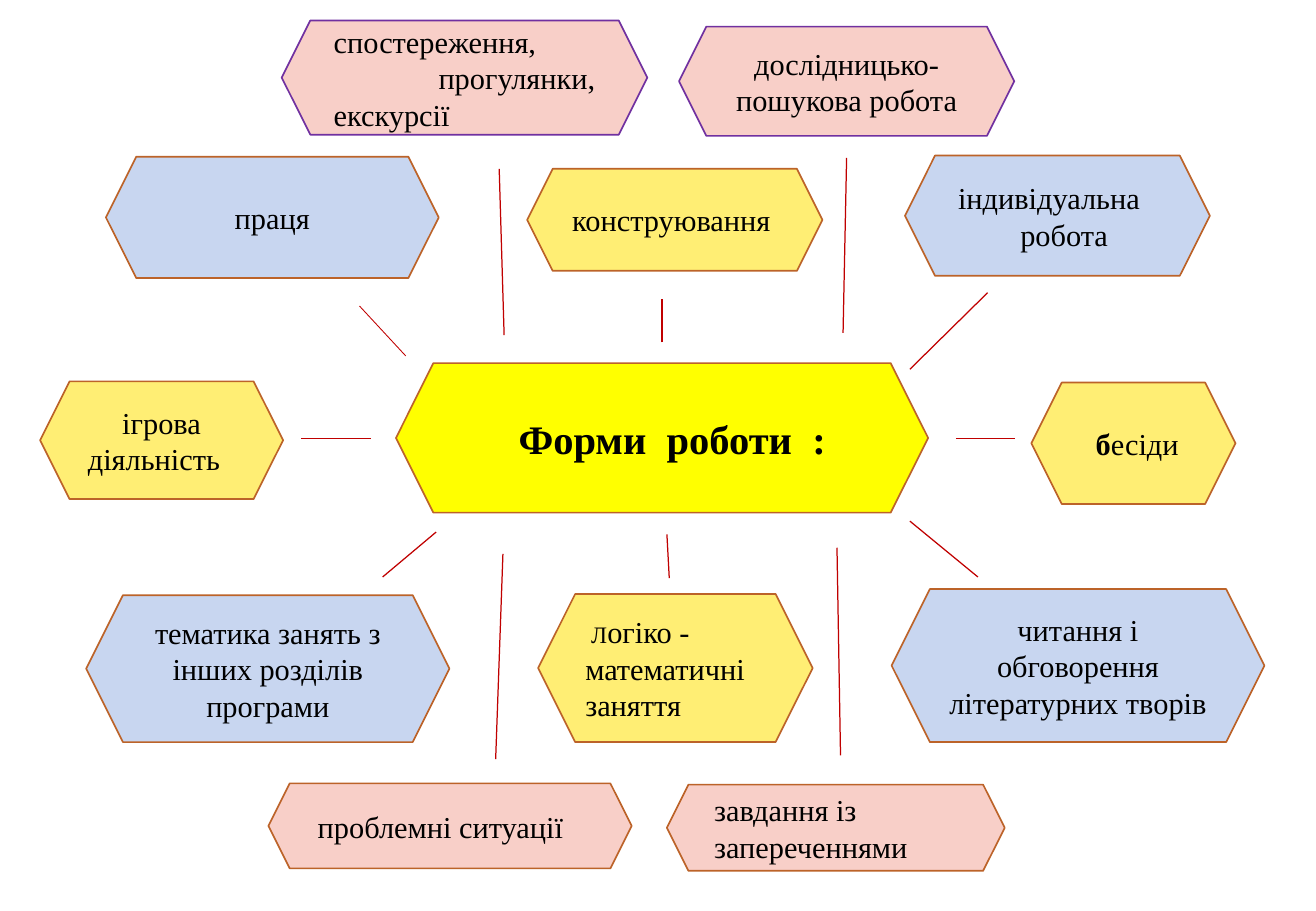
from dataclasses import dataclass

from lxml.etree import SubElement
from pptx import Presentation
from pptx.dml.color import RGBColor
from pptx.enum.shapes import MSO_CONNECTOR, MSO_SHAPE
from pptx.enum.text import MSO_ANCHOR, PP_ALIGN
from pptx.oxml.ns import qn
from pptx.util import Pt

LEFT, CENTER, RIGHT = PP_ALIGN.LEFT, PP_ALIGN.CENTER, PP_ALIGN.RIGHT


@dataclass(frozen=True)
class Theme:
    font: str = "Times New Roman"
    text: str = "000000"
    blue: str = "C8D6F0"
    pink: str = "F8CFC8"
    yellow: str = "FFEE74"
    bright: str = "FFFF00"
    brown: str = "BC6329"
    purple: str = "7030A0"
    red: str = "C00000"
    small: int = 14
    body: int = 18
    title: int = 24


THEME = Theme()


def add_run(paragraph, text, size=THEME.body, bold=False, spacing=0):
    run = paragraph.add_run()
    run.text = text
    run.font.name = THEME.font
    run.font.size = Pt(size)
    run.font.bold = bold
    run.font.color.rgb = RGBColor.from_string(THEME.text)
    if spacing:
        run.font._element.set("spc", str(spacing * 100))


@dataclass
class Line:
    runs: list
    align: PP_ALIGN = CENTER
    margin_left: float = 0
    margin_right: float = 0
    indent: float = 0


def plain(text, **layout):
    return Line([(text, {})], **layout)


class Diagram:
    def __init__(self, slide, theme):
        self.slide = slide
        self.theme = theme

    def hexagon(self, box, fill, lines, outline=None):
        shape = self.slide.shapes.add_shape(MSO_SHAPE.HEXAGON, *map(Pt, box))
        shape.shadow.inherit = False
        shape.fill.solid()
        shape.fill.fore_color.rgb = RGBColor.from_string(fill)
        shape.line.color.rgb = RGBColor.from_string(outline or self.theme.brown)
        shape.line.width = Pt(1)
        frame = shape.text_frame
        frame.word_wrap = True
        frame.vertical_anchor = MSO_ANCHOR.MIDDLE
        for index, line in enumerate(lines):
            paragraph = frame.add_paragraph() if index else frame.paragraphs[0]
            paragraph.alignment = line.align
            properties = paragraph._p.get_or_add_pPr()
            properties.set("marL", str(Pt(line.margin_left)))
            properties.set("marR", str(Pt(line.margin_right)))
            properties.set("indent", str(Pt(line.indent)))
            for text, style in line.runs:
                add_run(paragraph, text, **style)

    def ray(self, start, end, width=0.75):
        connector = self.slide.shapes.add_connector(
            MSO_CONNECTOR.STRAIGHT, *map(Pt, start + end))
        connector.line.color.rgb = RGBColor.from_string(self.theme.red)
        connector.line.width = Pt(width)
        SubElement(connector._element.spPr, qn("a:effectLst"))


def main():
    presentation = Presentation()
    presentation.slide_width, presentation.slide_height = Pt(780), Pt(540)
    slide = presentation.slides.add_slide(presentation.slide_layouts[6])
    theme = THEME
    diagram = Diagram(slide, theme)

    rays = [
        ((258.5, 315.4), (226.8, 342)),
        ((395.3, 316.8), (396.7, 342.7)),
        ((539.3, 308.9), (579.6, 342)),
        ((298.1, 328.3), (293.8, 450)),
        ((496.1, 324.7), (498.2, 447.8)),
        ((298.8, 198.7), (295.9, 100.1)),
        ((392.4, 203), (392.4, 177.1)),
        ((501.8, 93.6), (499.7, 197.3)),
        ((539.3, 218.9), (585.4, 173.5)),
    ]
    thin_rays = [
        ((213.1, 181.4), (240.5, 211)),
        ((566.6, 260), (601.9, 260)),
        ((178.6, 260), (219.6, 260)),
    ]
    for start, end in rays:
        diagram.ray(start, end)
    for start, end in thin_rays:
        diagram.ray(start, end, width=0.5)

    bold = {"bold": True}
    title = {"size": theme.title, "bold": True}
    title_gap = {**title, "spacing": 6}
    hexagons = [
        ((62.8, 92.9, 197.3, 72), theme.blue, [plain("праця")]),
        ((536.4, 92.2, 180.7, 71.3), theme.blue,
         [plain("індивідуальна", margin_right=10), plain("робота", margin_left=8)]),
        ((51.1, 352.8, 215.3, 87.1), theme.blue,
         [plain("тематика занять з інших розділів програми")]),
        ((167, 12.2, 216.7, 67.7), theme.pink,
         [plain("спостереження,", align=LEFT), plain("прогулянки,", align=RIGHT),
          plain("екскурсії", align=LEFT)], theme.purple),
        ((528.5, 349.2, 221, 90.7), theme.blue,
         [plain("читання і обговорення літературних творів")]),
        ((312.5, 100.1, 175, 60.5), theme.yellow, [plain("конструювання", align=LEFT)]),
        ((611.3, 226.8, 121, 72), theme.yellow,
         [Line([("б", bold), ("есіди", {})], margin_left=4.5)]),
        ((402.5, 15.8, 198.7, 64.8), theme.pink,
         [plain("дослідницько-пошукова робота")], theme.purple),
        ((159.1, 464.4, 215.3, 50.4), theme.pink,
         [plain("проблемні ситуації", align=LEFT)]),
        ((395.3, 465.1, 200.2, 51.1), theme.pink,
         [plain("завдання із запереченнями", align=LEFT)]),
        ((23.8, 226.1, 144, 69.8), theme.yellow,
         [plain("ігрова"), plain("діяльність", margin_right=9)]),
        ((319, 352.1, 162.7, 87.8), theme.yellow,
         [Line([("Л", {"size": theme.small}), ("огіко - математичні заняття", {})],
               align=LEFT, indent=3.5)]),
        ((234.7, 215.3, 315.4, 88.6), theme.bright,
         [Line([("Форми", title), (" ", title_gap), ("роботи", title),
                (" ", title_gap), (":", title)], margin_left=12)]),
    ]
    for hexagon in hexagons:
        diagram.hexagon(*hexagon)

    presentation.save("out.pptx")


if __name__ == "__main__":
    main()
